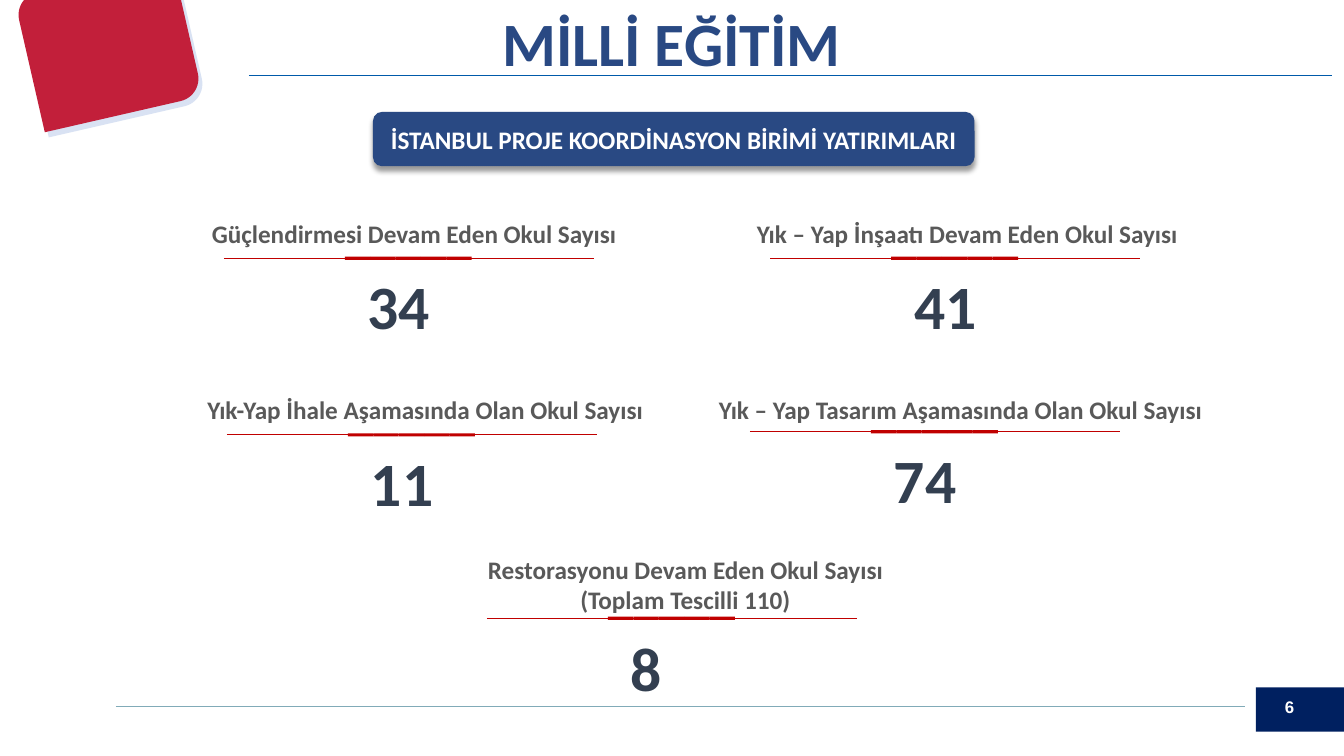
from dataclasses import dataclass

from lxml import etree
from pptx import Presentation
from pptx import util as u
from pptx.dml.color import RGBColor
from pptx.enum import shapes, text
from pptx.oxml import ns


@dataclass(frozen=True)
class Theme:
    font: str = "Calibri"
    number_font: str = "Arial"
    blue: str = "294983"
    red: str = "C00000"
    corner_red: str = "C21F3A"
    corner_blue: str = "4472C4"
    navy: str = "002060"
    heading_rule: str = "005AAA"
    footer_rule: str = "81ABB8"
    label: str = "595959"
    figure: str = "333F50"
    white: str = "FFFFFF"
    large: float = 44
    medium: float = 18
    small: float = 12


@dataclass(frozen=True)
class Box:
    left: float
    top: float
    width: float
    height: float

    def lengths(self) -> tuple[u.Length, ...]:
        return tuple(u.Cm(v) for v in (self.left, self.top, self.width, self.height))


@dataclass(frozen=True)
class Statistic:
    label_lines: tuple[str, ...]
    value: str
    label_box: Box
    rule_left: float
    rule_top: float
    value_gap: float = 0.13


THEME = Theme()
RULE_LENGTH = 9.32
BAR_COUNT = 5
BAR_WIDTH = 0.64
BAR_HEIGHT = 0.08
BAR_OFFSET = 3.05
VALUE_OFFSET = 3.38
VALUE_HEIGHT = 2.13
DIGIT_WIDTH = 0.81
TEXT_MARGINS = 0.49

STATISTICS = (
    Statistic(("Güçlendirmesi Devam Eden Okul Sayısı",), "34",
              Box(4.75, 5.38, 11.38, 1.02), 5.64, 6.5),
    Statistic(("Yık – Yap İnşaatı Devam Eden Okul Sayısı",), "41",
              Box(18.69, 5.38, 11.38, 1.02), 19.41, 6.5),
    Statistic(("Yık-Yap İhale Aşamasında Olan Okul Sayısı",), "11",
              Box(4.74, 9.8, 11.96, 1.02), 5.72, 10.95),
    Statistic(("Restorasyonu Devam Eden Okul Sayısı", "(Toplam Tescilli 110)"), "8",
              Box(11.18, 13.84, 12.19, 1.64), 12.27, 15.57, 0.18),
    Statistic(("Yık – Yap Tasarım Aşamasında Olan Okul Sayısı",), "74",
              Box(17.86, 9.8, 12.7, 1.02), 18.9, 10.87),
)


def write(frame, lines: tuple[str, ...], size: float, color: str,
          align=text.PP_ALIGN.CENTER, font: str = THEME.font) -> None:
    for index, line in enumerate(lines):
        paragraph = frame.paragraphs[0] if index == 0 else frame.add_paragraph()
        paragraph.alignment = align
        run = paragraph.add_run()
        run.text = line
        run.font.name = font
        run.font.size = u.Pt(size)
        run.font.bold = True
        run.font.color.rgb = RGBColor.from_string(color)


def add_label(slide, box: Box, lines: tuple[str, ...], size: float, color: str,
              align=text.PP_ALIGN.CENTER, font: str = THEME.font, wrap: bool = True):
    label = slide.shapes.add_textbox(*box.lengths())
    label.text_frame.word_wrap = wrap
    write(label.text_frame, lines, size, color, align, font)
    return label


def add_block(slide, preset, box: Box, color: str):
    block = slide.shapes.add_shape(preset, *box.lengths())
    block.shadow.inherit = False
    block.fill.solid()
    block.fill.fore_color.rgb = RGBColor.from_string(color)
    block.line.fill.background()
    return block


def add_rule(slide, left: float, top: float, length: float, color: str, width: float) -> None:
    rule = slide.shapes.add_connector(
        shapes.MSO_CONNECTOR.STRAIGHT,
        u.Cm(left), u.Cm(top), u.Cm(left + length), u.Cm(top))
    rule.line.color.rgb = RGBColor.from_string(color)
    rule.line.width = u.Pt(width)
    etree.SubElement(rule._element.spPr, ns.qn("a:effectLst"))


def add_alpha(color_element, percent: int) -> None:
    etree.SubElement(color_element, ns.qn("a:alpha"), val=str(percent * 1000))


def add_corner(slide) -> None:
    for left, top, color, opacity in ((0.79, -0.43, THEME.corner_blue, 20),
                                      (0.69, -0.56, THEME.corner_red, 100)):
        corner = add_block(slide, shapes.MSO_SHAPE.ROUND_2_DIAG_RECTANGLE,
                           Box(left, top, 4.09, 3.48), color)
        corner.rotation = 347.1
        add_alpha(corner._element.spPr.find(ns.qn("a:solidFill"))[0], opacity)


def add_banner(slide) -> None:
    banner = add_block(slide, shapes.MSO_SHAPE.ROUNDED_RECTANGLE,
                       Box(9.4, 2.82, 15.16, 1.37), THEME.blue)
    effects = banner._element.spPr.find(ns.qn("a:effectLst"))
    shadow = etree.SubElement(effects, ns.qn("a:outerShdw"), blurRad=str(u.Pt(4)),
                              dist=str(u.Pt(3)), dir="5400000", rotWithShape="0")
    add_alpha(etree.SubElement(shadow, ns.qn("a:srgbClr"), val="000000"), 40)
    banner.text_frame.word_wrap = True
    banner.text_frame.vertical_anchor = text.MSO_ANCHOR.MIDDLE
    write(banner.text_frame, ("İSTANBUL PROJE KOORDİNASYON BİRİMİ YATIRIMLARI",),
          THEME.medium, THEME.white)


def add_statistic(slide, item: Statistic) -> None:
    for index in range(BAR_COUNT):
        add_block(slide, shapes.MSO_SHAPE.RECTANGLE,
                  Box(item.rule_left + BAR_OFFSET + index * BAR_WIDTH,
                      item.rule_top - 0.03, BAR_WIDTH, BAR_HEIGHT), THEME.red)
    add_rule(slide, item.rule_left, item.rule_top, RULE_LENGTH, THEME.red, 0.5)
    value_box = Box(item.rule_left + VALUE_OFFSET, item.rule_top + item.value_gap,
                    TEXT_MARGINS + DIGIT_WIDTH * len(item.value), VALUE_HEIGHT)
    add_label(slide, value_box, (item.value,), THEME.large, THEME.figure,
              text.PP_ALIGN.LEFT, wrap=False)
    add_label(slide, item.label_box, item.label_lines, THEME.medium, THEME.label)


def add_title(slide) -> None:
    title = slide.shapes.title
    title.left, title.top, title.width, title.height = Box(3.3, 0, 27.25, 2.13).lengths()
    title.text_frame.vertical_anchor = text.MSO_ANCHOR.TOP
    title.text_frame.auto_size = text.MSO_AUTO_SIZE.NONE
    write(title.text_frame, ("MİLLİ EĞİTİM",), THEME.large, THEME.blue)


def main() -> None:
    deck = Presentation()
    deck.slide_width, deck.slide_height = u.Cm(33.87), u.Cm(19.05)
    slide = deck.slides.add_slide(deck.slide_layouts[5])
    add_title(slide)
    add_rule(slide, 2.92, 17.81, 28.45, THEME.footer_rule, 0.75)
    add_block(slide, shapes.MSO_SHAPE.RECTANGLE, Box(31.65, 17.32, 2.22, 1.12), THEME.navy)
    add_label(slide, Box(32.13, 17.42, 1.74, 0.76), ("6",), THEME.small, THEME.white,
              text.PP_ALIGN.LEFT, THEME.number_font)
    add_rule(slide, 6.27, 1.91, 27.31, THEME.heading_rule, 1)
    add_corner(slide)
    add_banner(slide)
    for item in STATISTICS:
        add_statistic(slide, item)
    deck.save("out.pptx")


if __name__ == "__main__":
    main()
